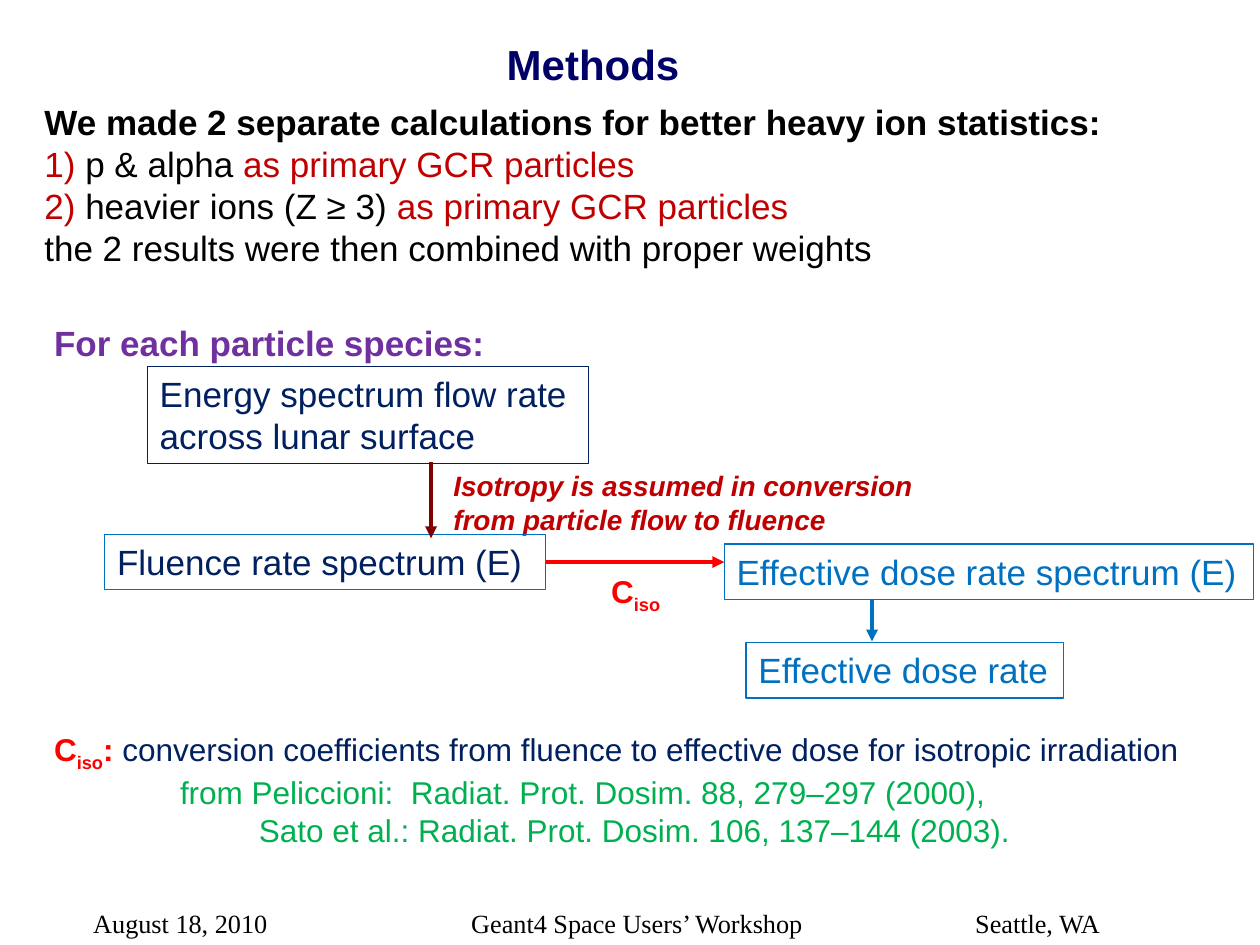
from dataclasses import dataclass

from lxml.etree import SubElement
from pptx import Presentation
from pptx.dml.color import RGBColor as Rgb
from pptx.enum.shapes import MSO_CONNECTOR as Connector, MSO_SHAPE as Shape
from pptx.enum.text import MSO_ANCHOR as Anchor, MSO_AUTO_SIZE as AutoSize, PP_ALIGN as Align
from pptx.oxml.ns import qn
from pptx.util import Cm, Pt


@dataclass(frozen=True)
class Theme:
    black: str = "000000"
    title: str = "000066"
    navy: str = "002060"
    blue: str = "0070C0"
    crimson: str = "C00000"
    maroon: str = "800000"
    red: str = "FF0000"
    purple: str = "7030A0"
    green: str = "00B050"
    sans: str = "Arial"
    serif: str = "Times New Roman"
    title_size: int = 24
    main_size: int = 20
    note_size: int = 18
    remark_size: int = 16
    footer_size: int = 15
    outline: float = 0.75
    arrow: float = 2.25


theme = Theme()
BOLD = {"bold": True}
BOLD_ITALIC = {"bold": True, "italic": True}
SUBSCRIPT = {"bold": True, "baseline": "-25000"}


def write(holder, lines, size, wrap=True, font=theme.sans):
    frame = holder.text_frame
    frame_format = {"word_wrap": wrap, "auto_size": AutoSize.NONE, "vertical_anchor": Anchor.TOP}
    for key, value in frame_format.items():
        setattr(frame, key, value)
    for index, line in enumerate(lines):
        paragraph = frame.paragraphs[0] if index == 0 else frame.add_paragraph()
        paragraph.alignment = Align.LEFT
        paragraph.space_before = Pt(0)
        for text, color, style in line:
            run = paragraph.add_run()
            run.text = text
            run_format = {"name": font, "size": Pt(size), "bold": False, **style}
            baseline = run_format.pop("baseline", None)
            for key, value in run_format.items():
                setattr(run.font, key, value)
            run.font.color.rgb = Rgb.from_string(color)
            if baseline:
                run._r.get_or_add_rPr().set("baseline", baseline)
    return frame.paragraphs


def draw_arrow(x1, y1, x2, y2, color):
    arrow = slide.shapes.add_connector(Connector.STRAIGHT, Cm(x1), Cm(y1), Cm(x2), Cm(y2))
    arrow.line.color.rgb = Rgb.from_string(color)
    arrow.line.width = Pt(theme.arrow)
    SubElement(arrow.line._get_or_add_ln(), qn("a:tailEnd"), type="triangle")
    SubElement(arrow._element.spPr, qn("a:effectLst"))
    return arrow


deck = Presentation()
deck.slide_width, deck.slide_height = Cm(25.4), Cm(19.05)
slide = deck.slides.add_slide(deck.slide_layouts[1])

title, calculations = slide.placeholders
for placeholder, area in (
    (title, (9.96, 0.64, 3.99, 1.27)),
    (calculations, (0.64, 1.9, 24.76, 3.68)),
):
    for key, value in zip(("left", "top", "width", "height"), area):
        setattr(placeholder, key, Cm(value))

write(title, [[("Methods", theme.title, BOLD)]], theme.title_size, wrap=False)
primaries = "as primary GCR particles"
calculation_lines = write(
    calculations,
    [
        [("We made 2 separate calculations for better heavy ion statistics:", theme.black, BOLD)],
        [("1) ", theme.crimson, {}), ("p & alpha ", theme.black, {}), (primaries, theme.crimson, {})],
        [("2) ", theme.crimson, {}), ("heavier ions (Z ≥ 3) ", theme.black, {}), (primaries, theme.crimson, {})],
        [("the 2 results were then combined with proper weights", theme.black, {})],
    ],
    theme.main_size,
)
for line in calculation_lines:
    properties = line._p.get_or_add_pPr()
    properties.set("marL", "0")
    properties.set("indent", "0")
    SubElement(properties, qn("a:buNone"))

coefficient = [("C", theme.red, BOLD), ("iso", theme.red, SUBSCRIPT)]
species, remark, factor, references, footer = [
    slide.shapes.add_textbox(*map(Cm, area))
    for area in (
        (0.84, 6.35, 9.25, 1.12),
        (8.89, 9.32, 10.06, 1.63),
        (12.07, 11.4, 1.6, 1.02),
        (0.84, 14.6, 23.93, 2.57),
        (1.63, 18.16, 21.87, 0.86),
    )
]
write(species, [[("For each particle species:", theme.purple, BOLD)]], theme.main_size, wrap=False)
write(
    remark,
    [
        [("Isotropy is assumed in conversion", theme.crimson, BOLD_ITALIC)],
        [("from particle flow to fluence", theme.crimson, BOLD_ITALIC)],
    ],
    theme.remark_size,
    wrap=False,
)
write(factor, [coefficient], theme.note_size, wrap=False)
reference_lines = write(
    references,
    [
        coefficient
        + [
            (": ", theme.red, BOLD),
            ("conversion coefficients from fluence to effective dose for isotropic irradiation", theme.navy, {}),
        ],
        [("from Peliccioni:  Radiat. Prot. Dosim. 88, 279–297 (2000),", theme.green, {})],
        [("Sato et al.: Radiat. Prot. Dosim. 106, 137–144 (2003).", theme.green, {})],
    ],
    theme.note_size,
)
for line, margin in zip(reference_lines[1:], (2.54, 4.13)):
    line._p.get_or_add_pPr().set("marL", str(Cm(margin)))

footer_line = write(
    footer,
    [[("August 18, 2010\tGeant4 Space Users’ Workshop\tSeattle, WA", theme.black, {})]],
    theme.footer_size,
    font=theme.serif,
)[0]
tab_stops = SubElement(footer_line._p.get_or_add_pPr(), qn("a:tabLst"))
for stop in (7.62, 17.78):
    SubElement(tab_stops, qn("a:tab"), pos=str(Cm(stop)), algn="l")

steps = {}
for step, area, ink, outline in (
    ("Energy spectrum flow rate across lunar surface", (2.97, 7.39, 8.89, 1.96), theme.navy, theme.navy),
    ("Fluence rate spectrum (E)", (2.11, 10.77, 8.89, 1.12), theme.navy, theme.blue),
    ("Effective dose rate spectrum (E)", (14.6, 10.97, 10.67, 1.12), theme.blue, theme.blue),
    ("Effective dose rate", (15.04, 12.95, 6.4, 1.12), theme.blue, theme.blue),
):
    box = slide.shapes.add_shape(Shape.RECTANGLE, *map(Cm, area))
    box.shadow.inherit = False
    box.fill.background()
    box.line.color.rgb = Rgb.from_string(outline)
    box.line.width = Pt(theme.outline)
    write(box, [[(step, ink, {})]], theme.main_size)
    steps[step] = box

draw_arrow(8.69, 9.32, 8.69, 10.85, theme.maroon)
draw_arrow(17.58, 12.07, 17.58, 12.93, theme.blue)
conversion = draw_arrow(11, 11.33, 14.6, 11.33, theme.red)
conversion.begin_connect(steps["Fluence rate spectrum (E)"], 3)

deck.save("out.pptx")
